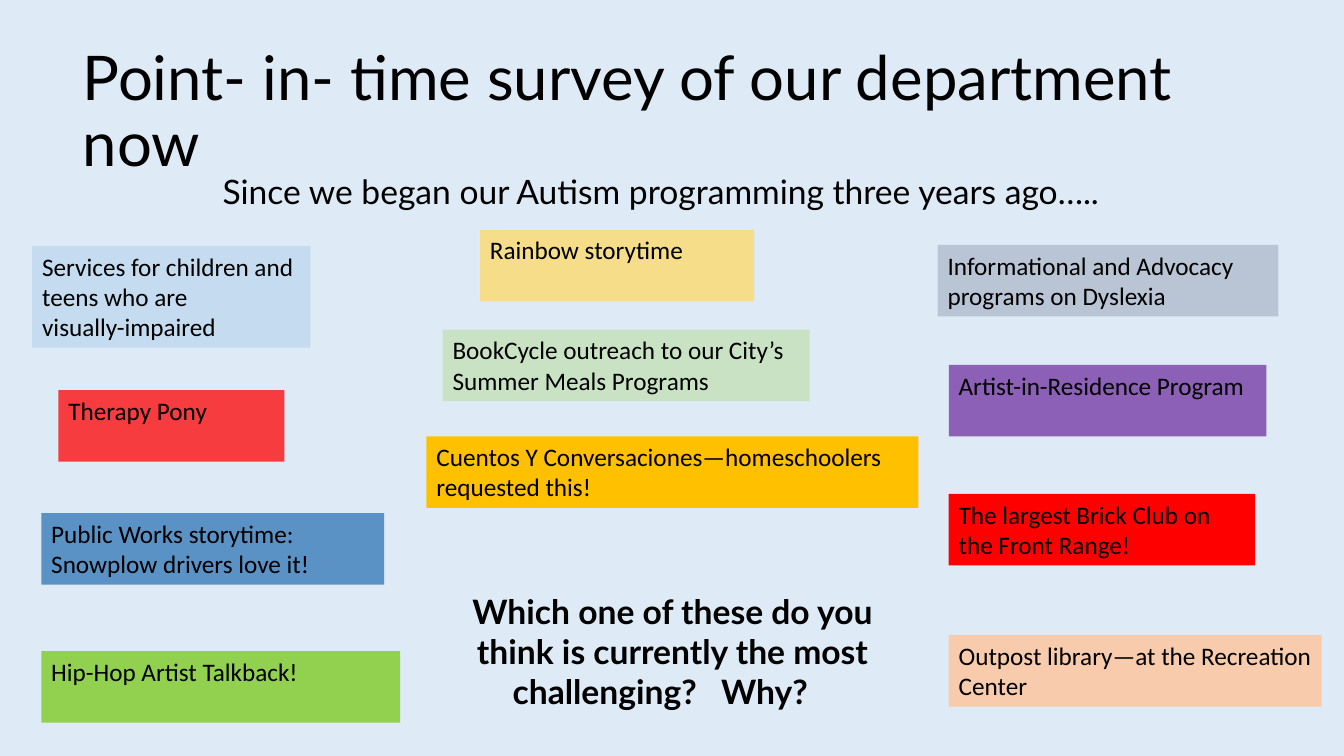
from dataclasses import dataclass

from lxml import etree
from pptx import Presentation
from pptx.dml.color import RGBColor
from pptx.enum.shapes import MSO_SHAPE
from pptx.enum.text import MSO_ANCHOR, MSO_AUTO_SIZE, PP_ALIGN
from pptx.oxml.ns import qn
from pptx.util import Inches, Pt

RECT = MSO_SHAPE.RECTANGLE
TOP, MIDDLE = MSO_ANCHOR.TOP, MSO_ANCHOR.MIDDLE
LEFT, CENTER = PP_ALIGN.LEFT, PP_ALIGN.CENTER
NO_AUTOFIT = MSO_AUTO_SIZE.NONE
TITLE_ONLY = 5


@dataclass(frozen=True)
class Theme:
    background: str = "DEEBF7"
    text: str = "000000"
    heading_font: str = "Lato"
    body_font: str = "Calibri"
    title_size: int = 44
    lead_size: int = 24
    body_size: int = 18
    pale_blue: str = "BDD7EE"
    blue: str = "2E75B6"
    yellow: str = "FFD966"
    gold: str = "FFC000"
    gray: str = "ADB9CA"
    red: str = "FF0000"
    pale_green: str = "C5E0B4"
    green: str = "92D050"
    purple: str = "7030A0"
    peach: str = "F8CBAD"


theme = Theme()


def write(sp, text, size, font=theme.heading_font, bold=False,
          align=LEFT, anchor=TOP, spacing=1.0):
    """Fill a shape with text, one paragraph per line."""
    tf = sp.text_frame
    tf.text = text
    tf.word_wrap = True
    tf.auto_size = NO_AUTOFIT
    tf.vertical_anchor = anchor
    for p in tf.paragraphs:
        p.alignment = align
        p.line_spacing = spacing
        for r in p.runs:
            r.font.name = font
            r.font.size = Pt(size)
            r.font.bold = bold
            r.font.color.rgb = RGBColor.from_string(theme.text)


def paint(sp, color, opacity):
    """Give a shape a solid fill with opacity in percent."""
    sp.fill.solid()
    sp.fill.fore_color.rgb = RGBColor.from_string(color)
    if opacity < 100:
        srgb = sp.fill._xPr.find(qn("a:solidFill")).find(qn("a:srgbClr"))
        etree.SubElement(srgb, qn("a:alpha")).set("val", str(opacity * 1000))


prs = Presentation()
prs.slide_width, prs.slide_height = Inches(13.33), Inches(7.5)
slide = prs.slides.add_slide(prs.slide_layouts[TITLE_ONLY])
slide.background.fill.solid()
slide.background.fill.fore_color.rgb = RGBColor.from_string(theme.background)

title = slide.shapes.title
title.left, title.top = Inches(0.72), Inches(0.4)
title.width, title.height = Inches(12.4), Inches(1.45)
write(title, "Point- in- time survey of our department  now", theme.title_size,
      anchor=MIDDLE, spacing=0.9)

question = slide.shapes.add_textbox(Inches(4.23), Inches(5.81), Inches(4.88), Inches(1.31))
write(question, "Which one of these do you think is currently the most challenging?   Why?   ",
      theme.lead_size, bold=True, align=CENTER)

lead = slide.shapes.add_textbox(Inches(2.11), Inches(1.65), Inches(9.6), Inches(0.91))
write(lead, "Since we began our Autism programming three years ago…..", theme.lead_size)

# left, top, width, height, color, opacity, text
one_row = 0.71
programs = [
    (0.32, 2.44, 2.76, 1.01, theme.pale_blue, 75,
     "Services for children and teens who are\nvisually-impaired"),
    (4.76, 2.28, 2.72, one_row, theme.yellow, 75, "Rainbow storytime"),
    (9.3, 2.43, 3.38, one_row, theme.gray, 75,
     "Informational and Advocacy programs on Dyslexia"),
    (0.58, 3.87, 2.24, one_row, theme.red, 74, "Therapy Pony"),
    (4.39, 3.27, 3.64, one_row, theme.pale_green, 76,
     "BookCycle outreach to our City’s Summer Meals Programs"),
    (9.41, 3.62, 3.15, one_row, theme.purple, 74, "Artist-in-Residence Program"),
    (0.41, 5.09, 3.4, one_row, theme.blue, 75,
     "Public Works storytime: Snowplow drivers love it!"),
    (4.23, 4.33, 4.88, one_row, theme.gold, 100,
     "Cuentos Y Conversaciones—homeschoolers requested this!"),
    (9.41, 4.9, 3.04, one_row, theme.red, 100,
     "The largest Brick Club on the Front Range!"),
    (0.41, 6.46, 3.56, one_row, theme.green, 100, "Hip-Hop Artist Talkback!"),
    (9.41, 6.3, 3.7, one_row, theme.peach, 100,
     "Outpost library—at the Recreation Center"),
]
for left, top, width, height, color, opacity, text in programs:
    sp = slide.shapes.add_shape(RECT, Inches(left), Inches(top), Inches(width), Inches(height))
    sp.shadow.inherit = False
    sp.line.fill.background()
    paint(sp, color, opacity)
    write(sp, text, theme.body_size, font=theme.body_font)

prs.save("out.pptx")
